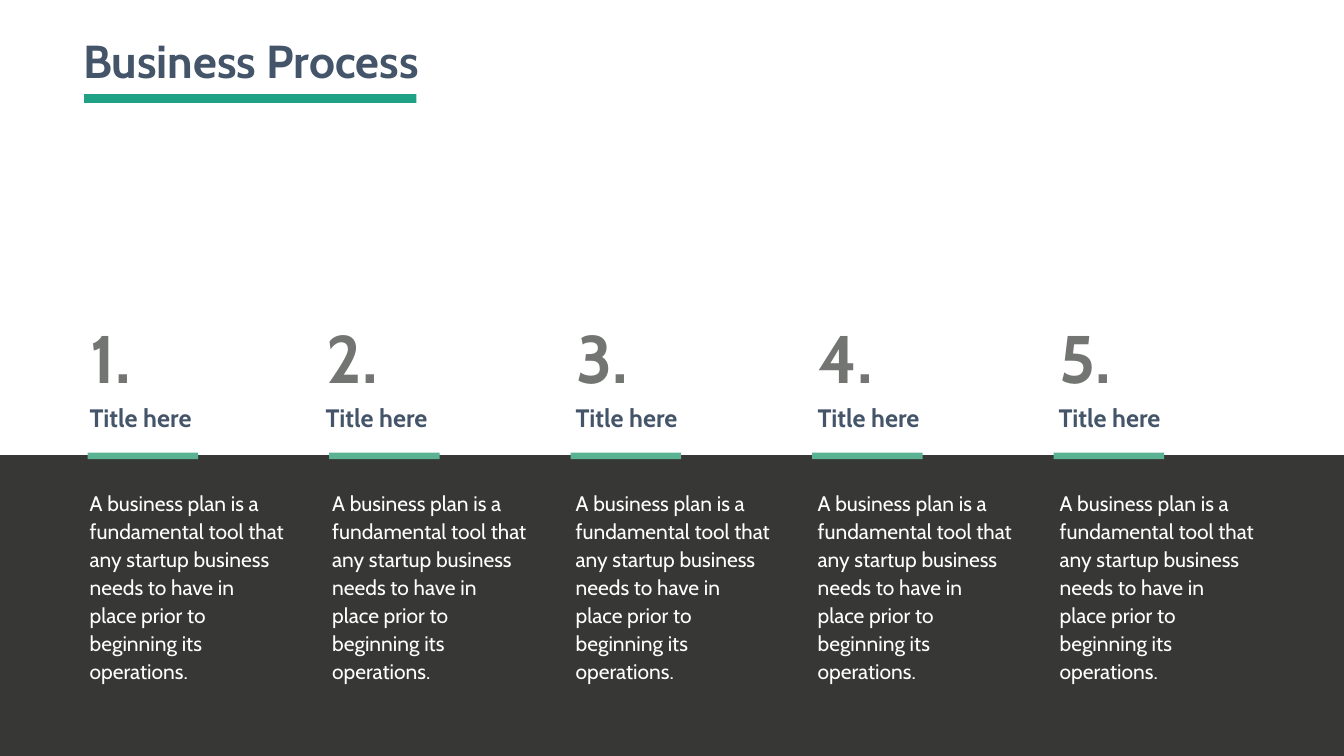
"""Builds the Business Process slide with five numbered steps."""
from pptx import Presentation
from pptx import util as u
from pptx.dml.color import RGBColor
from pptx.enum import shapes, text

PX = 9144
FONT = "Cabin"
WHITE = RGBColor(0xFF, 0xFF, 0xFF)
CHARCOAL = RGBColor(0x37, 0x38, 0x36)
SLATE = RGBColor(0x44, 0x54, 0x69)
GRAY = RGBColor(0x73, 0x75, 0x72)
MINT = RGBColor(0x5B, 0xB2, 0x92)
TEAL = RGBColor(0x1E, 0xA1, 0x85)

BODY = ("A business plan is a fundamental tool that any startup business "
        "needs to have in place prior to beginning its operations.")
BODY_LEFTS = (168, 649, 1132, 1612, 2092)
HEADING_LEFTS = (168, 636, 1132, 1612, 2090)
BAR_LEFT, BAR_PITCH = 174, 479


def px(*lengths):
    return [u.Emu(length * PX) for length in lengths]


def add_bar(page, bounds, color):
    bar = page.shapes.add_shape(shapes.MSO_SHAPE.RECTANGLE, *px(*bounds))
    bar.shadow.inherit = False
    bar.fill.solid()
    bar.fill.fore_color.rgb = color
    bar.line.fill.background()


def add_text(page, bounds, words, *, size, color, bold=False, wrap=False,
             spacing=None, anchor=text.MSO_ANCHOR.TOP):
    frame = page.shapes.add_textbox(*px(*bounds)).text_frame
    frame.word_wrap = wrap
    frame.auto_size = text.MSO_AUTO_SIZE.SHAPE_TO_FIT_TEXT
    frame.vertical_anchor = anchor
    para = frame.paragraphs[0]
    if spacing:
        para.line_spacing = u.Pt(spacing)
    span = para.add_run()
    span.text = words
    span.font.name = FONT
    span.font.size = u.Pt(size)
    span.font.bold = bold
    span.font.color.rgb = color


def add_step(page, index):
    heading_left = HEADING_LEFTS[index]
    add_text(page, (BODY_LEFTS[index], 963, 408, 344), BODY,
             size=30, color=WHITE, wrap=True, spacing=40)
    add_text(page, (heading_left, 798, 233, 66), "Title here",
             size=36, color=SLATE, bold=True, spacing=40)
    add_text(page, (heading_left + 2, 621, 132, 172), f"{index + 1}.",
             size=96, color=GRAY, bold=True, anchor=text.MSO_ANCHOR.BOTTOM)
    add_bar(page, (BAR_LEFT + index * BAR_PITCH, 898, 219, 13), MINT)


def main():
    deck = Presentation()
    deck.slide_width, deck.slide_height = px(2666, 1500)
    page = deck.slides.add_slide(deck.slide_layouts[6])
    add_bar(page, (0, 903, 2666, 597), CHARCOAL)
    for index in range(len(BODY_LEFTS)):
        add_step(page, index)
    add_text(page, (155, 60, 714, 121), "Business Process",
             size=66, color=SLATE, bold=True)
    add_bar(page, (167, 187, 659, 17), TEAL)
    deck.save("out.pptx")


if __name__ == "__main__":
    main()
